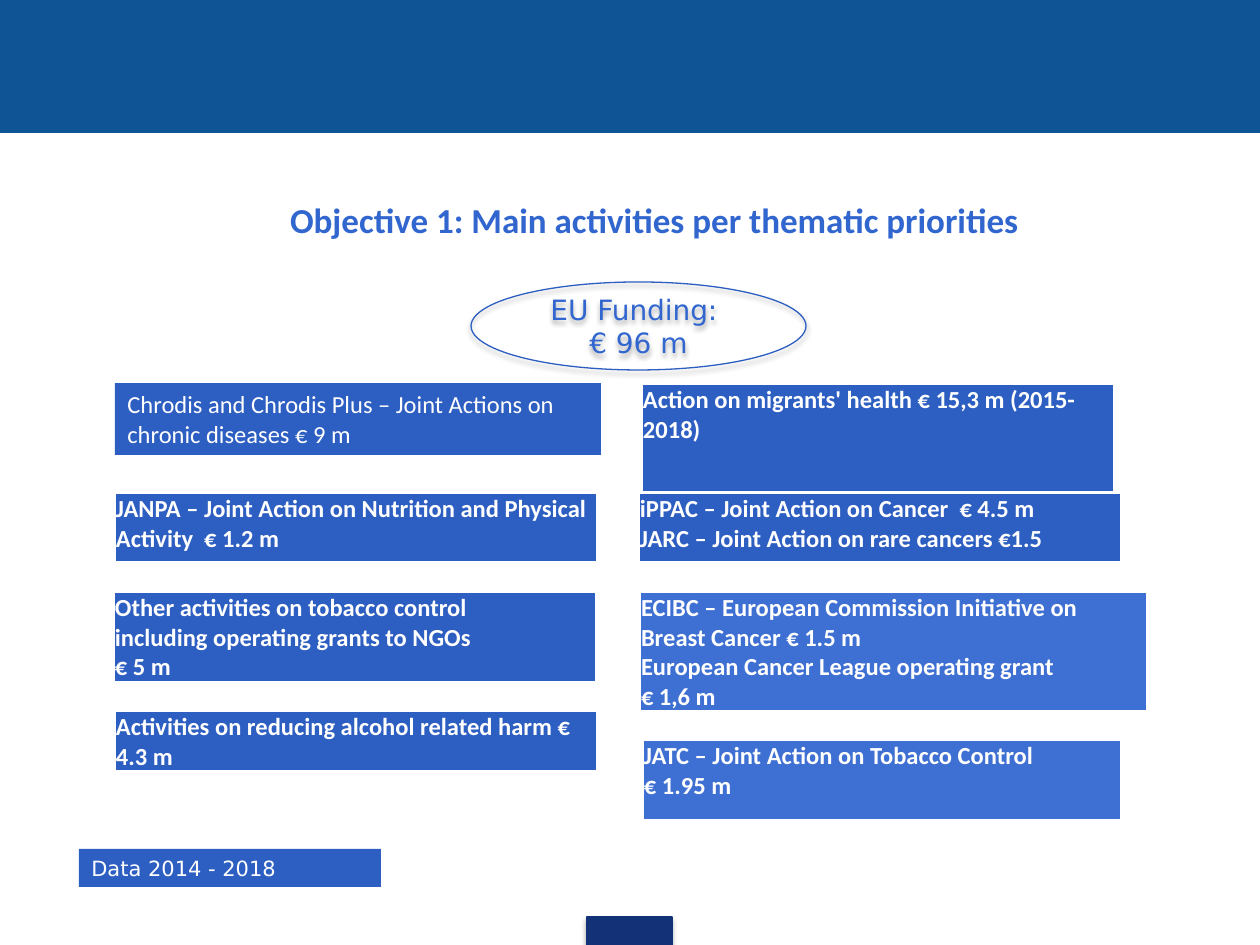
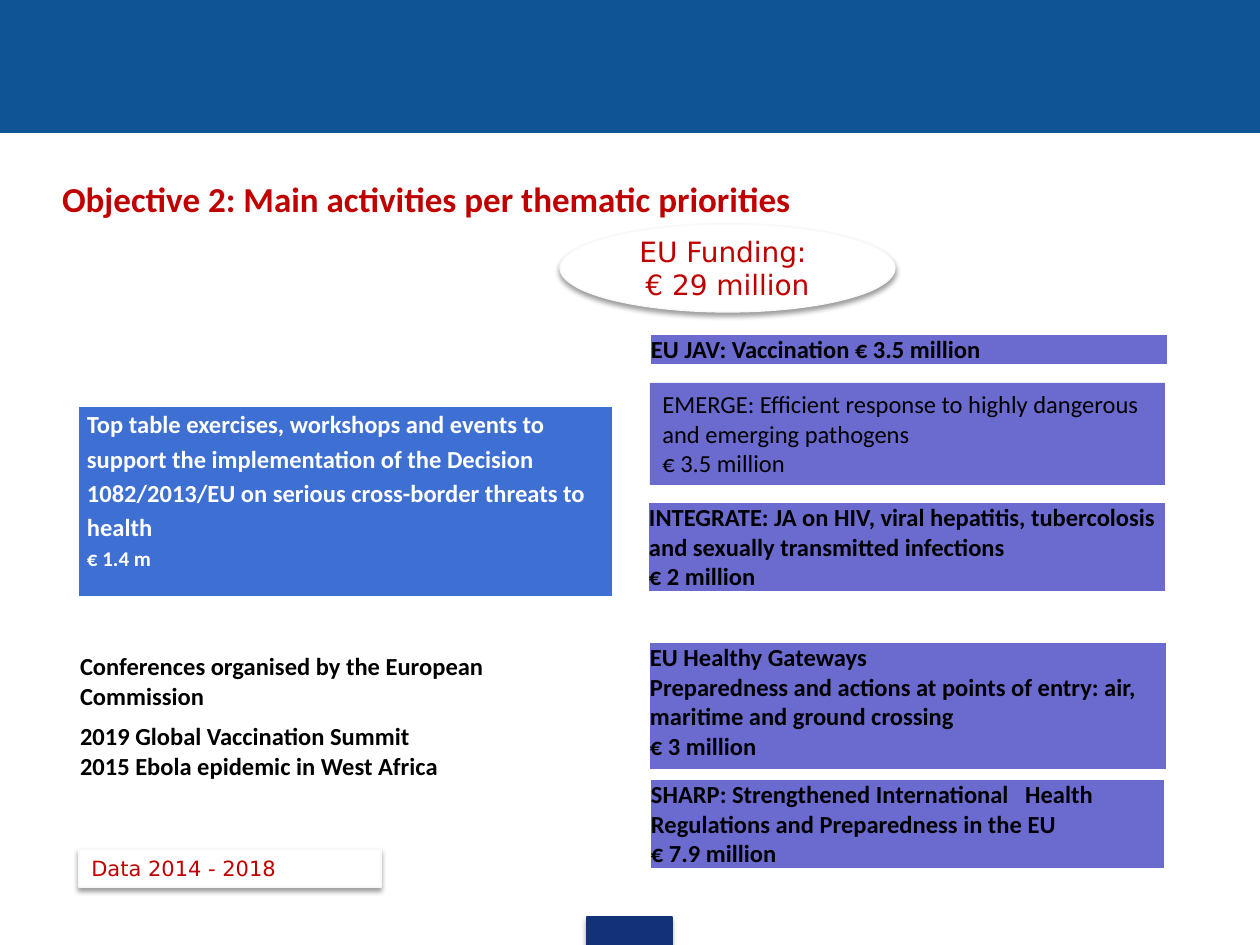
from lxml import etree
from pptx import Presentation
from pptx.dml.color import RGBColor
from pptx.enum.shapes import MSO_SHAPE
from pptx.enum.text import MSO_ANCHOR, MSO_AUTO_SIZE, PP_ALIGN
from pptx.oxml.ns import qn
from pptx.util import Emu, Pt

RECTANGLE, OVAL = MSO_SHAPE.RECTANGLE, MSO_SHAPE.OVAL
LEFT, CENTER = PP_ALIGN.LEFT, PP_ALIGN.CENTER
TOP, MIDDLE = MSO_ANCHOR.TOP, MSO_ANCHOR.MIDDLE
NO_FIT, GROW = MSO_AUTO_SIZE.NONE, MSO_AUTO_SIZE.SHAPE_TO_FIT_TEXT

EMU_PER_PX = 914400 / 126
PAGE_WIDTH, PAGE_HEIGHT = 1260, 945
TITLE_ONLY = 5


class Theme:
    band, footer = "0F5494", "133176"
    blue, light_blue, violet = "2D5EC1", "3E6FD2", "6B6BCF"
    title_blue, red = "3166CF", "C00000"
    white, black, edge = "FFFFFF", "000000", "F9F9F9"
    body_font, label_font = "Calibri", "DejaVu Sans"
    title_size, funding_size, card_size, small_size = 20, 16, 14, 12
    border = 1
    outline = 0.75


BAND = (0, 0, PAGE_WIDTH, 132)
FOOTER = (587, 917, 85, 28)
TITLE_HEIGHT, TITLE_INDENT = 58, 62
FUNDING_SIZE = (335, 88)
DATE_BOX, DATE_TEXT = (79, 849, 302, 38), "Data 2014 - 2018"

# Cards: (left, top, width, height), fill, text colour, lines
SLIDES = [
    {
        "title": "Objective 1: Main activities per thematic priorities",
        "title_top": 190, "align": CENTER, "accent": Theme.title_blue,
        "funding": ["EU Funding: ", "€ 96 m"], "funding_at": (471, 282),
        "funding_look": {"line": Theme.blue, "shadow": 35},
        "date_look": {"fill": Theme.blue}, "date_ink": Theme.white,
        "note": ((115, 383, 486, 72), Theme.blue, Theme.white,
                 ["Chrodis and Chrodis Plus – Joint Actions on chronic diseases € 9 m"]),
        "cards": [
            ((642, 384, 472, 108), Theme.blue, Theme.white,
             ["Action on migrants' health € 15,3 m (2015-2018)"]),
            ((115, 493, 482, 69), Theme.blue, Theme.white,
             ["JANPA – Joint Action on Nutrition and Physical Activity  € 1.2 m"]),
            ((639, 493, 482, 69), Theme.blue, Theme.white,
             ["iPPAC – Joint Action on Cancer  € 4.5 m",
              "JARC – Joint Action on rare cancers €1.5"]),
            ((114, 592, 482, 89), Theme.blue, Theme.white,
             ["Other activities on tobacco control",
              "including operating grants to NGOs", "€ 5 m"]),
            ((640, 592, 507, 119), Theme.light_blue, Theme.white,
             ["ECIBC – European Commission Initiative on Breast Cancer € 1.5 m",
              "European Cancer League operating grant", "€ 1,6 m"]),
            ((115, 711, 482, 60), Theme.blue, Theme.white,
             ["Activities on reducing alcohol related harm € 4.3 m"]),
            ((643, 740, 478, 80), Theme.light_blue, Theme.white,
             ["JATC – Joint Action on Tobacco Control", "€ 1.95 m"]),
        ],
    },
    {
        "title": "Objective 2: Main activities per thematic priorities",
        "title_top": 169, "align": LEFT, "accent": Theme.red,
        "funding": ["EU Funding: ", "€ 29 million"], "funding_at": (560, 224),
        "funding_look": {"fill": Theme.white, "line": Theme.edge, "shadow": 38},
        "date_look": {"fill": Theme.white, "line": Theme.edge, "shadow": 38},
        "date_ink": Theme.red,
        "note": ((650, 383, 515, 102), Theme.violet, Theme.black,
                 ["EMERGE: Efficient response to highly dangerous and emerging pathogens",
                  "€ 3.5 million"]),
        "exercises": ((78, 406, 535, 191), Theme.light_blue, Theme.white,
                      ["Top table exercises, workshops and events to support the "
                       "implementation of the Decision 1082/2013/EU on serious "
                       "cross-border threats to health", "€ 1.4 m"]),
        "cards": [
            ((650, 334, 518, 30), Theme.violet, Theme.black,
             ["EU JAV: Vaccination € 3.5 million"]),
            ((648, 502, 518, 90), Theme.violet, Theme.black,
             ["INTEGRATE: JA on HIV, viral hepatitis, tubercolosis and sexually "
              "transmitted infections", "€ 2 million"]),
            ((649, 642, 518, 128), Theme.violet, Theme.black,
             ["EU Healthy Gateways",
              "Preparedness and actions at points of entry: air, maritime and "
              "ground crossing", "€ 3 million"]),
            ((650, 779, 515, 89), Theme.violet, Theme.black,
             ["SHARP: Strengthened International   Health Regulations and "
              "Preparedness in the EU", "€ 7.9 million"]),
            ((79, 651, 535, 69), Theme.white, Theme.black,
             ["Conferences organised by the European Commission"]),
            ((79, 721, 535, 60), Theme.white, Theme.black,
             ["2019 Global Vaccination Summit",
              "2015 Ebola epidemic in West Africa"]),
        ],
    },
]


def px(*lengths):
    return [Emu(round(length * EMU_PER_PX)) for length in lengths]


def set_all(target, **values):
    for name, value in values.items():
        setattr(target, name, value)


def set_fill(target, colour):
    target.fill.solid()
    target.fill.fore_color.rgb = RGBColor.from_string(colour)


def set_margins(target, *margins):
    """Apply left, top, right and bottom margins in px."""
    names = ("margin_left", "margin_top", "margin_right", "margin_bottom")
    set_all(target, **dict(zip(names, px(*margins))))


def write(frame, lines, ink, size, font=Theme.body_font, bold=False,
          align=LEFT, spacing=None):
    frame.word_wrap = True
    for index, line in enumerate(lines):
        para = frame.paragraphs[0] if index == 0 else frame.add_paragraph()
        set_all(para, alignment=align, line_spacing=spacing)
        span = para.add_run()
        span.text = line
        set_all(span.font, name=font, size=Pt(size), bold=bold)
        span.font.color.rgb = RGBColor.from_string(ink)


def add_shadow(shape, opacity):
    effects = shape.element.spPr.find(qn("a:effectLst"))
    shadow = etree.SubElement(effects, qn("a:outerShdw"), blurRad=str(Pt(3.1)),
                              dist=str(Pt(1.8)), dir="5400000", rotWithShape="0")
    colour = etree.SubElement(shadow, qn("a:srgbClr"), val=Theme.black)
    etree.SubElement(colour, qn("a:alpha"), val=str(opacity * 1000))


def add_box(page, kind, box, fill=None, line=None, shadow=None):
    shape = page.shapes.add_shape(kind, *px(*box))
    shape.shadow.inherit = False
    if fill:
        set_fill(shape, fill)
    else:
        shape.fill.background()
    if line:
        shape.line.color.rgb = RGBColor.from_string(line)
        shape.line.width = Pt(Theme.outline)
    else:
        shape.line.fill.background()
    if shadow:
        add_shadow(shape, shadow)
    return shape


def add_label(page, box, look, lines, ink, **text_format):
    frame = add_box(page, RECTANGLE, box, **look).text_frame
    write(frame, lines, ink, **text_format)
    set_all(frame, vertical_anchor=TOP, auto_size=GROW)


def add_card(page, box, fill, ink, lines, margins=(1, 1, 1, 0), spacing=None):
    """Add a one-cell table with white borders."""
    frame = page.shapes.add_table(1, 1, *px(*box))
    table = frame.table
    set_all(table, first_row=False, horz_banding=False)
    cell = table.cell(0, 0)
    set_margins(cell, *margins)
    cell.vertical_anchor = TOP
    properties = cell._tc.get_or_add_tcPr()
    for side in ("lnL", "lnR", "lnT", "lnB"):
        border = etree.SubElement(properties, qn(f"a:{side}"), w=str(Pt(Theme.border)))
        solid = etree.SubElement(border, qn("a:solidFill"))
        etree.SubElement(solid, qn("a:srgbClr"), val=Theme.white)
    set_fill(cell, fill)
    write(cell.text_frame, lines, ink, Theme.card_size, bold=True, spacing=spacing)
    return cell


def add_title(page, content):
    title = page.shapes.title
    box = px(0, content["title_top"], PAGE_WIDTH, TITLE_HEIGHT)
    set_all(title, **dict(zip(("left", "top", "width", "height"), box)))
    frame = title.text_frame
    set_margins(frame, TITLE_INDENT, 6, 13, 6)
    set_all(frame, vertical_anchor=MIDDLE, auto_size=NO_FIT)
    write(frame, [content["title"]], content["accent"], Theme.title_size,
          bold=True, align=content["align"])


def move_to_master(deck, shapes):
    tree = deck.slide_master.element.cSld.spTree
    for position, shape in enumerate(shapes, start=2):
        tree.insert(position, shape.element)


def build_page(deck, content):
    page = deck.slides.add_slide(deck.slide_layouts[TITLE_ONLY])
    add_title(page, content)
    add_label(page, DATE_BOX, content["date_look"], [DATE_TEXT], content["date_ink"],
              size=Theme.small_size, font=Theme.label_font)
    box, fill, ink, lines = content["note"]
    add_label(page, box, {"fill": fill}, lines, ink, size=Theme.card_size)
    for card in content["cards"]:
        add_card(page, *card)
    if "exercises" in content:
        cell = add_card(page, *content["exercises"], margins=(9, 0, 9, 0), spacing=1.15)
        amount = cell.text_frame.paragraphs[-1].runs[0]
        amount.font.size = Pt(Theme.small_size)
    funding = add_box(page, OVAL, content["funding_at"] + FUNDING_SIZE,
                      **content["funding_look"])
    funding.text_frame.vertical_anchor = MIDDLE
    write(funding.text_frame, content["funding"], content["accent"],
          Theme.funding_size, font=Theme.label_font, align=CENTER)
    return page


def main():
    deck = Presentation()
    deck.slide_width, deck.slide_height = px(PAGE_WIDTH, PAGE_HEIGHT)
    pages = [build_page(deck, content) for content in SLIDES]
    move_to_master(deck, [
        add_box(pages[0], RECTANGLE, BAND, fill=Theme.band, line=Theme.band),
        add_box(pages[0], RECTANGLE, FOOTER, fill=Theme.footer, line=Theme.footer,
                shadow=35),
    ])
    deck.save("out.pptx")


if __name__ == "__main__":
    main()
